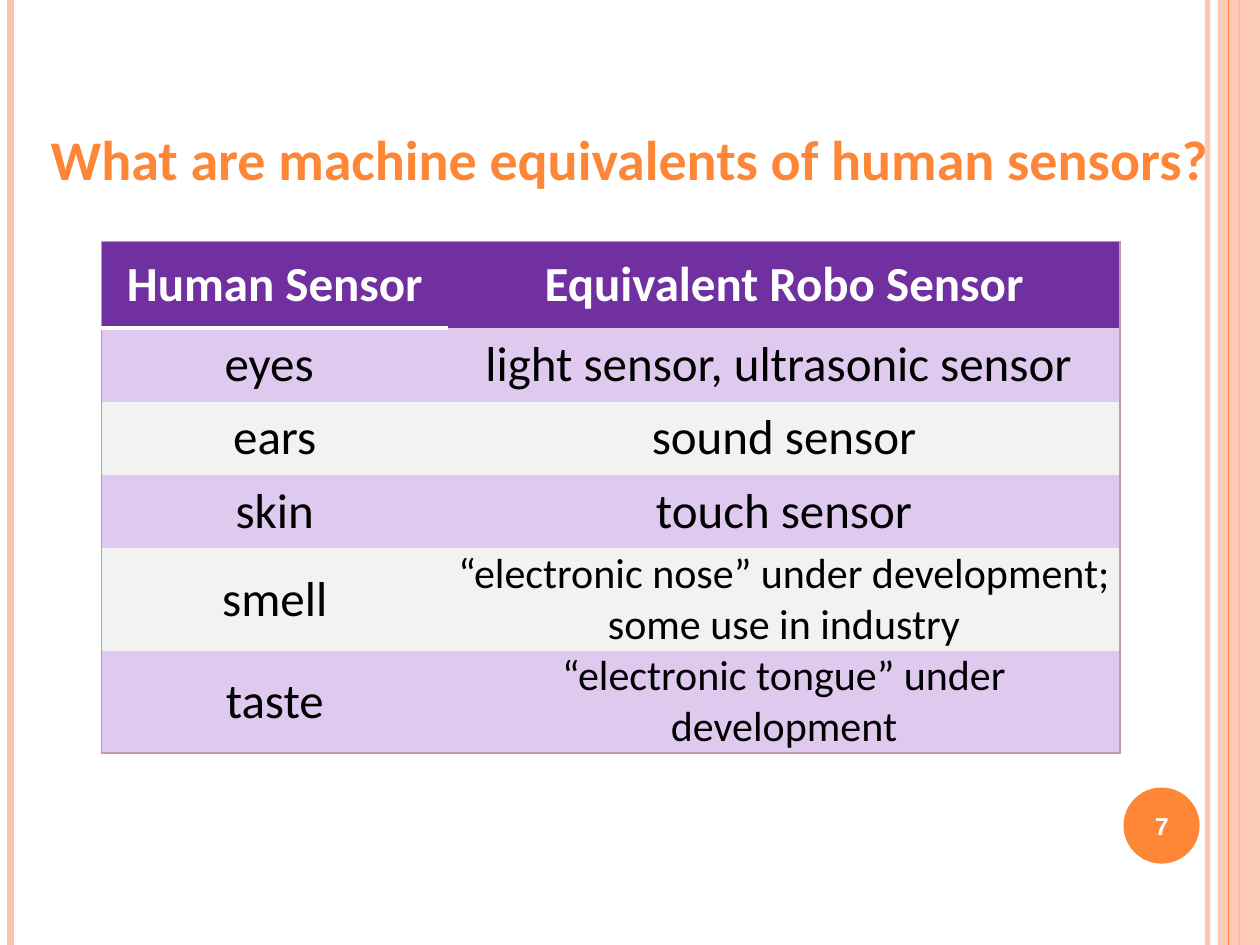
from dataclasses import dataclass

from lxml import etree
from pptx import Presentation
from pptx.dml.color import RGBColor
from pptx.enum.shapes import MSO_CONNECTOR, MSO_SHAPE
from pptx.enum.text import MSO_ANCHOR, PP_ALIGN
from pptx.oxml.ns import qn
from pptx.util import Pt

STRAIGHT = MSO_CONNECTOR.STRAIGHT
RECT, OVAL = MSO_SHAPE.RECTANGLE, MSO_SHAPE.OVAL
MIDDLE, BOTTOM = MSO_ANCHOR.MIDDLE, MSO_ANCHOR.BOTTOM
CENTER = PP_ALIGN.CENTER

WIDTH, HEIGHT = 720, 540
ORANGE, PEACH, PURPLE, LILAC = "FE8637", "FEC3AE", "7030A0", "DFC9EF"
GREY, FRAME, WHITE, BLACK = "F2F2F2", "C49C9B", "FFFFFF", "000000"
NO_STYLE = "{2D5ABB26-0587-4C30-8999-92F81FD0307C}"


@dataclass
class Rail:
    x: float
    color: str
    width: float
    opacity: int = 100


@dataclass
class SensorRow:
    human: str
    machine: str
    height: float = 42
    machine_size: float = 28


LEFT_RAILS = [Rail(690, PEACH, 3, 93), Rail(6, PEACH, 4.5), Rail(708, ORANGE, 1.5)]
INNER_RAIL = Rail(702, ORANGE, 0.75)
COLUMNS = [198, 384]
ROWS = [
    SensorRow("Human Sensor", "Equivalent Robo Sensor", 49.5),
    SensorRow("eyes ", "light sensor, ultrasonic sensor "),
    SensorRow("ears", "sound sensor"),
    SensorRow("skin", "touch sensor"),
    SensorRow("smell", "“electronic nose” under development; some use in industry", 58.5, 24),
    SensorRow("taste", "“electronic tongue” under development", 58.5, 24),
]


def rgb(color: str) -> RGBColor:
    return RGBColor.from_string(color)


def set_opacity(element, percent: int) -> None:
    """Make the first solid colour inside the element see-through."""
    clr = next(element.iter(qn("a:srgbClr")))
    etree.SubElement(clr, qn("a:alpha"), val=str(percent * 1000))


def add_rail(s, rail: Rail) -> None:
    line = s.shapes.add_connector(STRAIGHT, Pt(rail.x), 0, Pt(rail.x), Pt(HEIGHT))
    line.line.color.rgb = rgb(rail.color)
    line.line.width = Pt(rail.width)
    spPr = line._element.spPr
    etree.SubElement(spPr, qn("a:effectLst"))
    if rail.opacity < 100:
        set_opacity(spPr, rail.opacity)


def add_plain_shape(s, kind, x: float, y: float, w: float, h: float, color: str):
    sp = s.shapes.add_shape(kind, Pt(x), Pt(y), Pt(w), Pt(h))
    sp.shadow.inherit = False
    sp.fill.solid()
    sp.fill.fore_color.rgb = rgb(color)
    sp.line.fill.background()
    return sp


def write(tf, text: str, size: float, color: str, bold: bool, font: str = "Calibri") -> None:
    p = tf.paragraphs[0]
    p.alignment = CENTER
    r = p.add_run()
    r.text = text
    r.font.name, r.font.size, r.font.bold = font, Pt(size), bold
    r.font.color.rgb = rgb(color)


def set_borders(cell, borders: dict[str, tuple[str, float]]) -> None:
    """Draw the given sides (L, R, T, B) and leave the others bare."""
    tcPr = cell._tc.get_or_add_tcPr()
    for side in "LRTB":
        color, width = borders.get(side, (None, 0))
        ln = etree.SubElement(tcPr, qn(f"a:ln{side}"), w=str(Pt(width)))
        if color:
            fill = etree.SubElement(ln, qn("a:solidFill"))
            etree.SubElement(fill, qn("a:srgbClr"), val=color)
        else:
            etree.SubElement(ln, qn("a:noFill"))


def cell_borders(row: int, col: int) -> dict[str, tuple[str, float]]:
    """Thin frame round the table and a white rule under the first heading."""
    frame = (FRAME, 1)
    borders = {"L" if col == 0 else "R": frame}
    if row == 0:
        borders["T"] = frame
    if row == len(ROWS) - 1:
        borders["B"] = frame
    if col == 0 and row == 0:
        borders["B"] = (WHITE, 2.75)
    if col == 0 and row == 1:
        borders["T"] = (WHITE, 2.75)
    return borders


def fill_cell(cell, row: int, col: int, text: str, size: float) -> None:
    header = row == 0
    set_borders(cell, cell_borders(row, col))
    cell.fill.solid()
    cell.fill.fore_color.rgb = rgb(PURPLE if header else LILAC if row % 2 else GREY)
    cell.vertical_anchor = MIDDLE
    cell.margin_left = cell.margin_right = Pt(5)
    cell.margin_top = cell.margin_bottom = 0
    write(cell.text_frame, text, size, WHITE if header else BLACK, header)


def add_sensor_table(s, x: float, y: float) -> None:
    height = sum(row.height for row in ROWS)
    frame = s.shapes.add_table(len(ROWS), len(COLUMNS), Pt(x), Pt(y),
                               Pt(sum(COLUMNS)), Pt(height))
    table = frame.table
    table.first_row = table.horz_banding = False
    next(frame._element.iter(qn("a:tableStyleId"))).text = NO_STYLE
    for column, width in zip(table.columns, COLUMNS):
        column.width = Pt(width)
    for i, row in enumerate(ROWS):
        table.rows[i].height = Pt(row.height)
        fill_cell(table.cell(i, 0), i, 0, row.human, 28)
        fill_cell(table.cell(i, 1), i, 1, row.machine, row.machine_size)


def main() -> None:
    prs = Presentation()
    prs.slide_width, prs.slide_height = Pt(WIDTH), Pt(HEIGHT)
    s = prs.slides.add_slide(prs.slide_layouts[5])

    # Side rails and band
    for rail in LEFT_RAILS:
        add_rail(s, rail)
    band = add_plain_shape(s, RECT, 696, 0, 24, HEIGHT, PEACH)
    set_opacity(band._element.spPr, 87)
    add_rail(s, INNER_RAIL)

    # Page number on its disc
    add_plain_shape(s, OVAL, 642, 450, 43.5, 43.5, ORANGE)
    number = s.shapes.add_textbox(Pt(640), Pt(451.5), Pt(48), Pt(41))
    tf = number.text_frame
    tf.word_wrap = True
    tf.vertical_anchor = MIDDLE
    write(tf, "7", 14, WHITE, True, "Arial")

    # Sensor table
    add_sensor_table(s, 58, 138)

    # Title, in front of the rails
    title = s.shapes.title
    title.left, title.top, title.width, title.height = 0, Pt(57), Pt(WIDTH), Pt(56)
    title.text_frame.vertical_anchor = BOTTOM
    write(title.text_frame, "What are machine equivalents of human sensors?", 32, ORANGE, True)
    s.shapes._spTree.append(title._element)

    prs.save("out.pptx")


if __name__ == "__main__":
    main()
